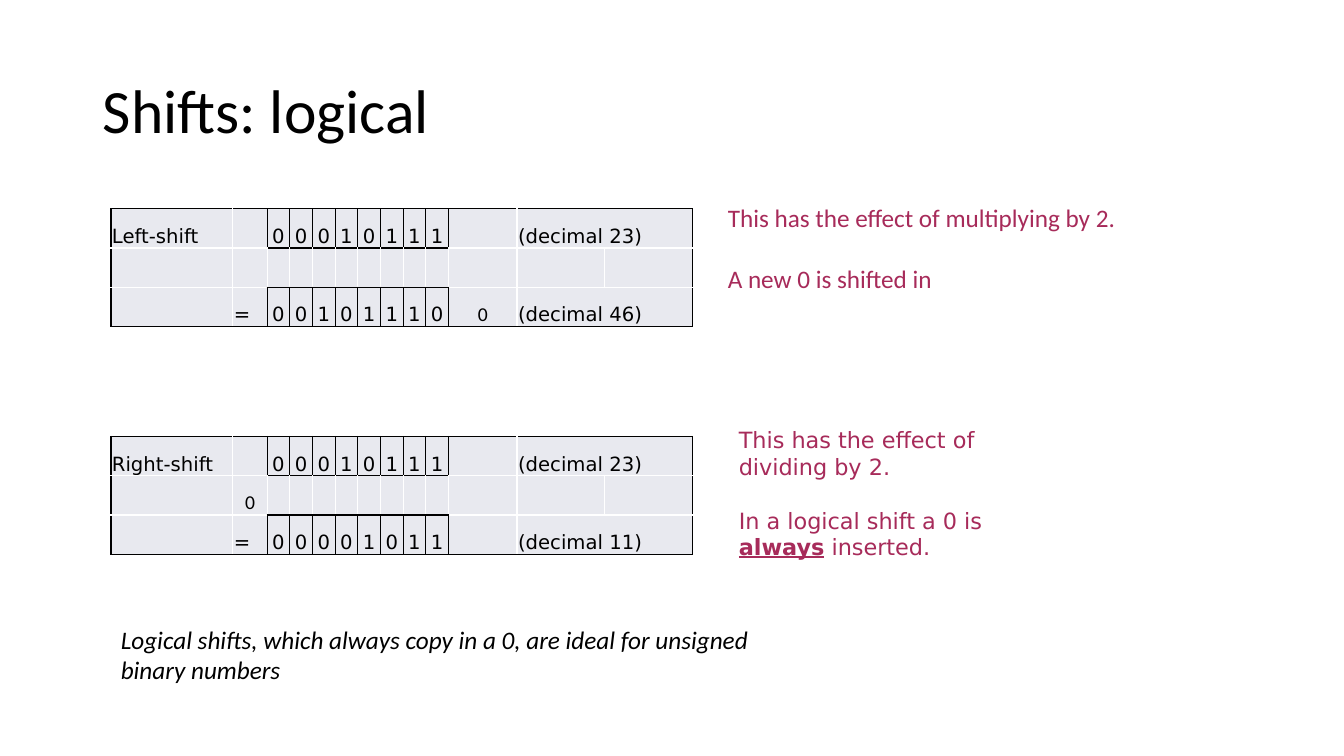
from itertools import product

from lxml.etree import SubElement
from pptx import Presentation
from pptx.dml.color import RGBColor
from pptx.enum.text import MSO_ANCHOR, PP_ALIGN
from pptx.oxml.ns import qn
from pptx.util import Inches, Pt

BLACK = RGBColor(0, 0, 0)
WHITE = RGBColor(255, 255, 255)
PALE = RGBColor(0xE8, 0xE9, 0xEF)
CRIMSON = RGBColor(0xA7, 0x2B, 0x5A)
SANS, MONO_DIGITS = "Calibri", "DejaVu Sans"

TITLE = "Shifts: logical"
SHIFTS = [
    (2.07, [("Left-shift", "", "00010111", "", "(decimal 23)"),
            ("", "", " " * 8, "", ""),
            ("", "=", "00101110", "0", "(decimal 46)")]),
    (4.33, [("Right-shift", "", "00010111", "", "(decimal 23)"),
            ("", "0", " " * 8, "", ""),
            ("", "=", "00001011", "", "(decimal 11)")]),
]
NOTES = [
    ((7.12, 1.96, 6.67, 1.01), SANS, 18, CRIMSON, False, 22,
     [["This has the effect of multiplying by 2."], ["A new 0 is shifted in"]]),
    ((7.23, 4.18, 2.66, 1.45), MONO_DIGITS, 16, CRIMSON, False, 19,
     [["This has the effect of dividing by 2."],
      ["In a logical shift a 0 is ", "always", " inserted."]]),
    ((1.1, 6.14, 6.67, 0.71), SANS, 18, BLACK, True, 0,
     [["Logical shifts, which always copy in a 0, are ideal for unsigned binary numbers"]]),
]

TABLE_LEFT, ROW_HEIGHT = 1.1, 0.39
COLUMNS = [1.21, 0.34] + [0.225] * 8 + [0.68, 0.87, 0.87]
BITS = range(2, 10)
SIDES = {"a:lnL": (0, -1), "a:lnR": (0, 1), "a:lnT": (-1, 0), "a:lnB": (1, 0)}


def style(font, name, size, color):
    font.name, font.size = name, Pt(size)
    font.color.rgb = color


def is_black(row, column):
    outside = row not in range(3) or column not in range(len(COLUMNS))
    return outside or (row != 1 and column in BITS)


def draw_borders(cell, row, column, width):
    properties = cell._tc.get_or_add_tcPr()
    for tag, (down, right) in SIDES.items():
        step = width if right == 1 else right
        black = is_black(row, column) or is_black(row + down, column + step)
        line = SubElement(properties, qn(tag), w=str(Pt(1)))
        fill = SubElement(line, qn("a:solidFill"))
        SubElement(fill, qn("a:srgbClr"), val=str(BLACK if black else WHITE))


def add_shift_table(page, top, lines):
    frame = page.shapes.add_table(3, len(COLUMNS), Inches(TABLE_LEFT), Inches(top),
                                  Inches(sum(COLUMNS)), Inches(3 * ROW_HEIGHT))
    table = frame.table
    table.first_row = table.horz_banding = False
    for column, width in zip(table.columns, COLUMNS):
        column.width = Inches(width)
    for row in table.rows:
        row.height = Inches(ROW_HEIGHT)
    for row in (0, 2):
        table.cell(row, 11).merge(table.cell(row, 12))
    for row, column in product(range(3), range(len(COLUMNS))):
        label, sign, bits, carry, value = lines[row]
        text = [label, sign, *bits, carry, value, ""][column].strip()
        cell = table.cell(row, column)
        cell.margin_left = cell.margin_right = cell.margin_top = Inches(0.01)
        cell.margin_bottom = 0
        cell.vertical_anchor = MSO_ANCHOR.BOTTOM
        draw_borders(cell, row, column, cell.span_width if cell.is_merge_origin else 1)
        cell.fill.solid()
        cell.fill.fore_color.rgb = PALE
        if text:
            cell.text = text
            para = cell.text_frame.paragraphs[0]
            shifted_in = text == "0" and column not in BITS
            style(para.font, SANS if shifted_in else MONO_DIGITS, 14, BLACK)
            if column in BITS or shifted_in:
                para.alignment = PP_ALIGN.CENTER


def add_note(page, place, name, size, color, italic, gap, paragraphs):
    frame = page.shapes.add_textbox(*map(Inches, place)).text_frame
    frame.word_wrap = True
    for index, spans in enumerate(paragraphs):
        para = frame.add_paragraph() if index else frame.paragraphs[0]
        para.space_before = Pt(gap if index else 0)
        style(para.font, name, size, color)
        para.font.italic = italic
        for text in spans:
            span = para.add_run()
            span.text = text
            if text == "always":
                span.font.bold = span.font.underline = True


def main():
    deck = Presentation()
    deck.slide_width, deck.slide_height = Inches(13.33), Inches(7.5)
    page = deck.slides.add_slide(deck.slide_layouts[5])
    title = page.shapes.title
    title.left, title.top, title.width, title.height = map(Inches, (0.92, 0.4, 11.5, 1.45))
    title.text = TITLE
    title.text_frame.vertical_anchor = MSO_ANCHOR.MIDDLE
    heading = title.text_frame.paragraphs[0]
    heading.alignment = PP_ALIGN.LEFT
    heading.line_spacing = 0.9
    style(heading.font, SANS, 44, BLACK)
    for top, lines in SHIFTS:
        add_shift_table(page, top, lines)
    for note in NOTES:
        add_note(page, *note)
    deck.save("out.pptx")


if __name__ == "__main__":
    main()
